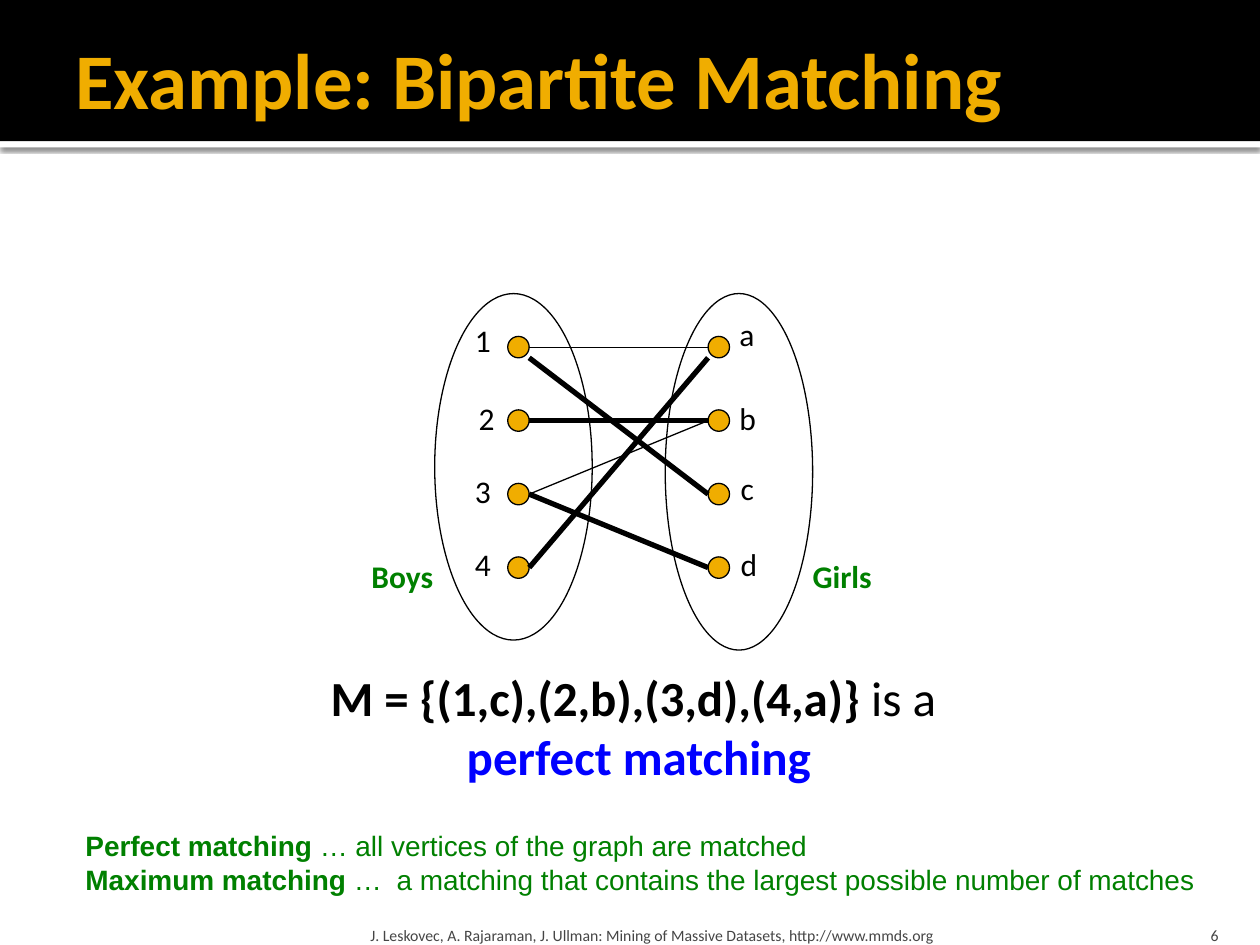
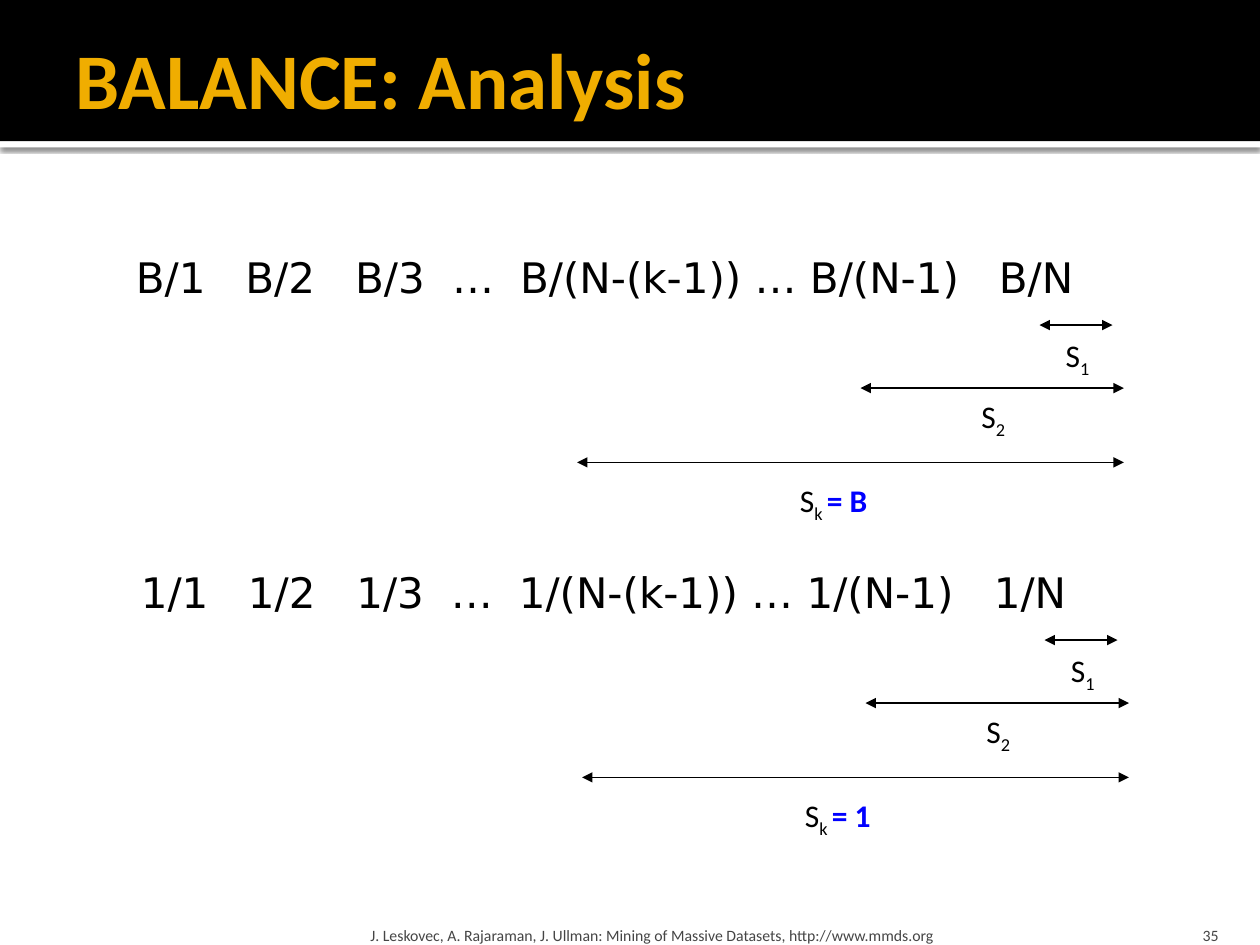
from pptx import Presentation
from pptx.dml.color import RGBColor
from pptx.enum.shapes import MSO_CONNECTOR as Link, MSO_SHAPE as Kind
from pptx.enum.text import MSO_ANCHOR as Anchor, PP_ALIGN as Align
from pptx.oxml import parse_xml
from pptx.oxml.ns import nsdecls
from pptx.util import Inches, Pt

BLACK = RGBColor(0x00, 0x00, 0x00)
WHITE = RGBColor(0xFF, 0xFF, 0xFF)
GOLD = RGBColor(0xF0, 0xAD, 0x00)
GREEN = RGBColor(0x00, 0x80, 0x00)
BLUE = RGBColor(0x00, 0x00, 0xFF)
GREY = RGBColor(0x45, 0x45, 0x45)

BASE = {"name": "Calibri", "size": Pt(18), "bold": False, "color": BLACK}
TITLE = {"size": Pt(45), "bold": True, "color": GOLD}
FOOT = {"size": Pt(9), "color": GREY}
SIDE = {"bold": True, "color": GREEN}
CLAIM = {"size": Pt(28)}
NOTE = {"name": "Arial", "size": Pt(16), "color": GREEN}
SERIES = {"name": "DejaVu Sans", "size": Pt(24)}
STRONG = {"bold": True}
KEY = {"bold": True, "color": BLUE}
SUB = {"sub": True}

PAD = (0.1, 0.05, 0.1, 0.05)
CREDIT = ("J. Leskovec, A. Rajaraman, J. Ullman: "
          "Mining of Massive Datasets, http://www.mmds.org")
DOT = 0.17
STEP = 1.75 / 3


def xml(body):
    """Parse one drawing element given without its namespace."""
    tag, rest = body.split(" ", 1)
    return parse_xml(f"{tag} {nsdecls('a')} {rest}")


def style(run, fmt):
    """Apply a dict of format values to a run."""
    for key, value in fmt.items():
        if key == "color":
            run.font.color.rgb = value
        elif key == "sub":
            run._r.get_or_add_rPr().set("baseline", "-25000")
        else:
            setattr(run.font, key, value)


def write(slide, box, paras, look, align=Align.LEFT, anchor=Anchor.TOP,
          pad=PAD, wrap=False, tabs=()):
    """Add a text box whose paragraphs are lists of (text, format) runs."""
    frame = slide.shapes.add_textbox(*map(Inches, box)).text_frame
    frame.word_wrap, frame.vertical_anchor = wrap, anchor
    for side, gap in zip(("left", "top", "right", "bottom"), pad):
        setattr(frame, f"margin_{side}", Inches(gap))
    for i, runs in enumerate(paras):
        para = frame.add_paragraph() if i else frame.paragraphs[0]
        para.alignment = align
        if tabs:
            stops = "".join(f'<a:tab pos="{Inches(t)}" algn="l"/>' for t in tabs)
            para._p.get_or_add_pPr().append(xml(f"<a:tabLst >{stops}</a:tabLst>"))
        for text, fmt in runs:
            if text == "\n":
                para.add_line_break()
                continue
            run = para.add_run()
            run.text = text
            style(run, {**BASE, **look, **fmt})


def label(slide, box, text, look, **opts):
    """Add a text box with one plain run."""
    write(slide, box, [[(text, {})]], look, **opts)


def shape(slide, kind, box, fill=None, edge=None):
    """Add a preset shape with an optional fill and outline."""
    item = slide.shapes.add_shape(kind, *map(Inches, box))
    item.shadow.inherit = False
    if fill is None:
        item.fill.background()
    else:
        item.fill.solid()
        item.fill.fore_color.rgb = fill
    if edge is None:
        item.line.fill.background()
    else:
        item.line.color.rgb = edge
        item.line.width = Pt(0.75)
    return item


def line(slide, ends, width=0.75, arrows=False):
    """Add a straight line, with arrowheads at both ends if asked."""
    item = slide.shapes.add_connector(Link.STRAIGHT, *map(Inches, ends))
    item.line.color.rgb = BLACK
    item.line.width = Pt(width)
    item._element.spPr.append(xml("<a:effectLst />"))
    if arrows:
        for end in ("headEnd", "tailEnd"):
            item.line._ln.append(xml(f'<a:{end} type="triangle"/>'))


def base(deck, title, number):
    """Add a slide with the title band and the footer."""
    slide = deck.slides.add_slide(deck.slide_layouts[6])
    strip = shape(slide, Kind.RECTANGLE, (0, 1.12, 10, 0.05), WHITE)
    strip._element.spPr.find(".//{*}effectLst").append(xml(
        f'<a:outerShdw blurRad="{Pt(2.5)}" dist="{Pt(0.8)}" dir="5400000">'
        '<a:srgbClr val="000000"><a:alpha val="60000"/></a:srgbClr>'
        "</a:outerShdw>"))
    shape(slide, Kind.RECTANGLE, (0, 0, 10, 1.12), BLACK)
    label(slide, (0.5, 0.08, 9, 1.08), title, TITLE, wrap=True,
          anchor=Anchor.MIDDLE, pad=(0.1, 0.05, 0.05, 0.05))
    label(slide, (8.97, 7.2, 0.8, 0.3), number, FOOT, wrap=True,
          align=Align.RIGHT, anchor=Anchor.BOTTOM, pad=(0.1, 0.05, 0.1, 0))
    label(slide, (2.89, 7.2, 6.02, 0.3), CREDIT, FOOT, wrap=True,
          anchor=Anchor.BOTTOM, pad=(0.05, 0.05, 0.05, 0))
    return slide


def graph(slide, x, y):
    """Draw the boys and girls graph with its matching."""
    left, right, top = x + 1.18, x + 2.77, y + 0.34
    for col in (left, right):
        for i in range(4):
            shape(slide, Kind.OVAL, (col, top + i * STEP, DOT, DOT), GOLD, BLACK)
    low = DOT / 2
    edges = ((0, 0, 0.25, 0, 0), (0, 2, 3, low, 0), (1, 1, 3, 0, 0),
             (2, 1, 0.75, 0, 0), (2, 3, 3, 0, 0), (3, 0, 3, 0, low))
    for boy, girl, width, drop, land in edges:
        line(slide, (left + DOT, top + low + boy * STEP + drop,
                     right, top + low + girl * STEP + land), width)
    names = (("1", 0.82, 0.17), ("2", 0.85, 0.79), ("3", 0.82, 1.37),
             ("4", 0.82, 1.95), ("a", 2.92, 0.12), ("b", 2.92, 0.79),
             ("c", 2.93, 1.34), ("d", 2.93, 1.95))
    for name, dx, dy in names:
        label(slide, (x + dx, y + dy, 0.36, 0.4), name, {})
    shape(slide, Kind.OVAL, (x + 0.6, y, 1.25, 2.75), edge=BLACK)
    shape(slide, Kind.OVAL, (x + 2.43, y, 1.17, 2.83), edge=BLACK)
    label(slide, (x, y + 2.04, 0.74, 0.4), "Boys", SIDE)
    label(slide, (x + 3.5, y + 2.04, 0.69, 0.4), "Girls", SIDE)


def sums(slide, x, y, top, total, tabs):
    """Draw a series of fractions with the spans of its partial sums."""
    terms = ("1", "2", "3", "…", "(N-(k-1))", "(N-1)", "N")
    parts = [t if t == "…" else f"{top}/{t}" for t in terms]
    parts[4:6] = [f"{parts[4]} … {parts[5]}"]
    label(slide, (x, y, 8.5, 0.5), "\t".join(parts), SERIES, wrap=True, tabs=tabs)
    spans = (("1", 7.27, 7.85, 0.63, 7.38, 0.67, 0.48),
             ("2", 5.85, 7.94, 1.13, 6.71, 1.15, 0.48),
             ("k ", 3.6, 7.94, 1.72, 5.27, 1.82, 0.85))
    for name, start, end, dy, dx, drop, wide in spans:
        line(slide, (x + start, y + dy, x + end, y + dy), arrows=True)
        runs = [("S", {}), (name, SUB)]
        if name == "k ":
            runs.append((f"= {total}", KEY))
        write(slide, (x + dx, y + drop, wide, 0.4), [runs], {})


def match(deck):
    """Build the bipartite matching slide."""
    slide = base(deck, "Example: Bipartite Matching", "6")
    graph(slide, 2.85, 2.33)
    write(slide, (2.49, 5.25, 5.16, 1.04),
          [[("M = {(1,c),(2,b),(3,d),(4,a)}", STRONG), (" is a ", {}),
            ("\n", {}), ("perfect matching", KEY)]], CLAIM, align=Align.CENTER)
    write(slide, (0.58, 6.53, 9.19, 0.64),
          [[("Perfect matching", STRONG),
            (" … all vertices of the graph are matched", {})],
           [("Maximum matching", STRONG),
            (" …\ta matching that contains the largest possible "
             "number of matches", {})]], NOTE, wrap=True, tabs=(2.47,))


def balance(deck):
    """Build the analysis slide."""
    slide = base(deck, "BALANCE: Analysis", "35")
    sums(slide, 0.98, 1.95, "B", "B", (0.87, 1.74, 2.51, 3.05, 6.85))
    sums(slide, 1.02, 4.45, "1", "1", (0.85, 1.71, 2.46, 3.0, 6.77))


def main():
    """Build and save the deck."""
    deck = Presentation()
    deck.slide_width, deck.slide_height = Inches(10), Inches(7.5)
    match(deck)
    balance(deck)
    deck.save("out.pptx")


if __name__ == "__main__":
    main()
